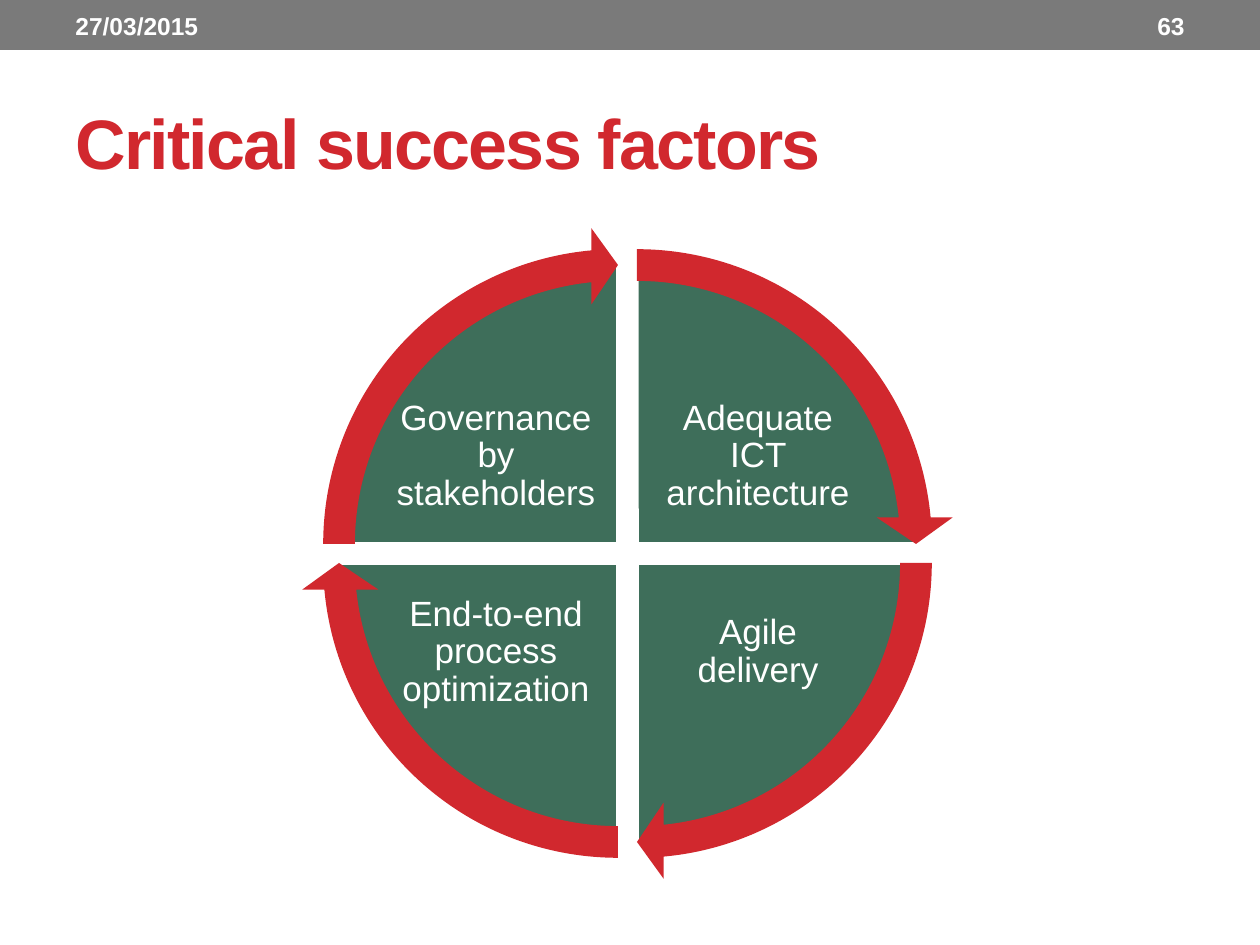
import pptx
import pptx.util
import pptx.dml.color
import pptx.enum.shapes
import pptx.enum.text

PX = 914400 / 126
COLORS = {"bar": "7A7A7A", "red": "D1282E", "green": "3E6E5A", "white": "FFFFFF"}
SHAPES = pptx.enum.shapes.MSO_SHAPE
ALIGN = pptx.enum.text.PP_ALIGN

presentation = pptx.Presentation()
presentation.slide_width = int(1260 * PX)
presentation.slide_height = int(945 * PX)
slide = presentation.slides.add_slide(presentation.slide_layouts[6])


def add_shape(kind, box, color, adjustments=()):
    shape = slide.shapes.add_shape(kind, *[int(length * PX) for length in box])
    shape.shadow.inherit = False
    shape.fill.solid()
    shape.fill.fore_color.rgb = pptx.dml.color.RGBColor.from_string(COLORS[color])
    shape.line.fill.background()
    for index, value in enumerate(adjustments):
        shape.adjustments[index] = value
    return shape


def add_text(text, box, size, color, align=ALIGN.LEFT, bold=False):
    shape = slide.shapes.add_textbox(*[int(length * PX) for length in box])
    frame = shape.text_frame
    frame.word_wrap = True
    frame.vertical_anchor = pptx.enum.text.MSO_ANCHOR.MIDDLE
    paragraph = frame.paragraphs[0]
    paragraph.alignment = align
    run = paragraph.add_run()
    run.text = text
    run.font.name = "Arial"
    run.font.size = pptx.util.Pt(size)
    run.font.bold = bold
    run.font.color.rgb = pptx.dml.color.RGBColor.from_string(COLORS[color])
    return shape


add_shape(SHAPES.RECTANGLE, (0, 0, 1260, 50), "bar")
title = add_text("Critical success factors", (63, 73, 1134, 136), 40, "red", bold=True)
title.text_frame.paragraphs[0].runs[0]._r.get_or_add_rPr().set("spc", "-100")

GAP = 19
QUARTER = 54
FULL_TURN = 216
ARROW_HEAD = 3.28
quadrants = [
    ("Adequate ICT architecture", 1, 0, 162),
    ("Agile delivery", 1, 1, 0),
    ("End-to-end process optimization", 0, 1, 54),
    ("Governance by stakeholders", 0, 0, 108),
]

for label, column, row, start in quadrants:
    end = (start + QUARTER) % FULL_TURN
    pie_box = (336 + GAP * column, 262 + GAP * row, 564, 564)
    pie = add_shape(SHAPES.PIE, pie_box, "green", (start, end))
    pie.line.color.rgb = pptx.dml.color.RGBColor.from_string(COLORS["white"])
    pie.line.width = pptx.util.Pt(2.08)
    label_box = (392 + 262 * column, 379 + 196 * row, 208, 155)
    frame = add_text(label, label_box, 20, "white", ALIGN.CENTER).text_frame
    frame.margin_left = frame.margin_right = int(4 * PX)
    frame.margin_top = frame.margin_bottom = int(4 * PX)
    frame.paragraphs[0].line_spacing = 0.9

for label, column, row, start in quadrants:
    arrow_box = (301 + GAP * column, 227 + GAP * row, 634, 634)
    arrow_end = start + QUARTER - ARROW_HEAD
    add_shape(SHAPES.CIRCULAR_ARROW, arrow_box, "red", (0.05, ARROW_HEAD, arrow_end, start, 0.06))

add_text("63", (1050, 3, 147, 45), 14, "white", ALIGN.RIGHT, bold=True)
add_text("27/03/2015", (63, 3, 399, 45), 14, "white", bold=True)

presentation.save("out.pptx")
